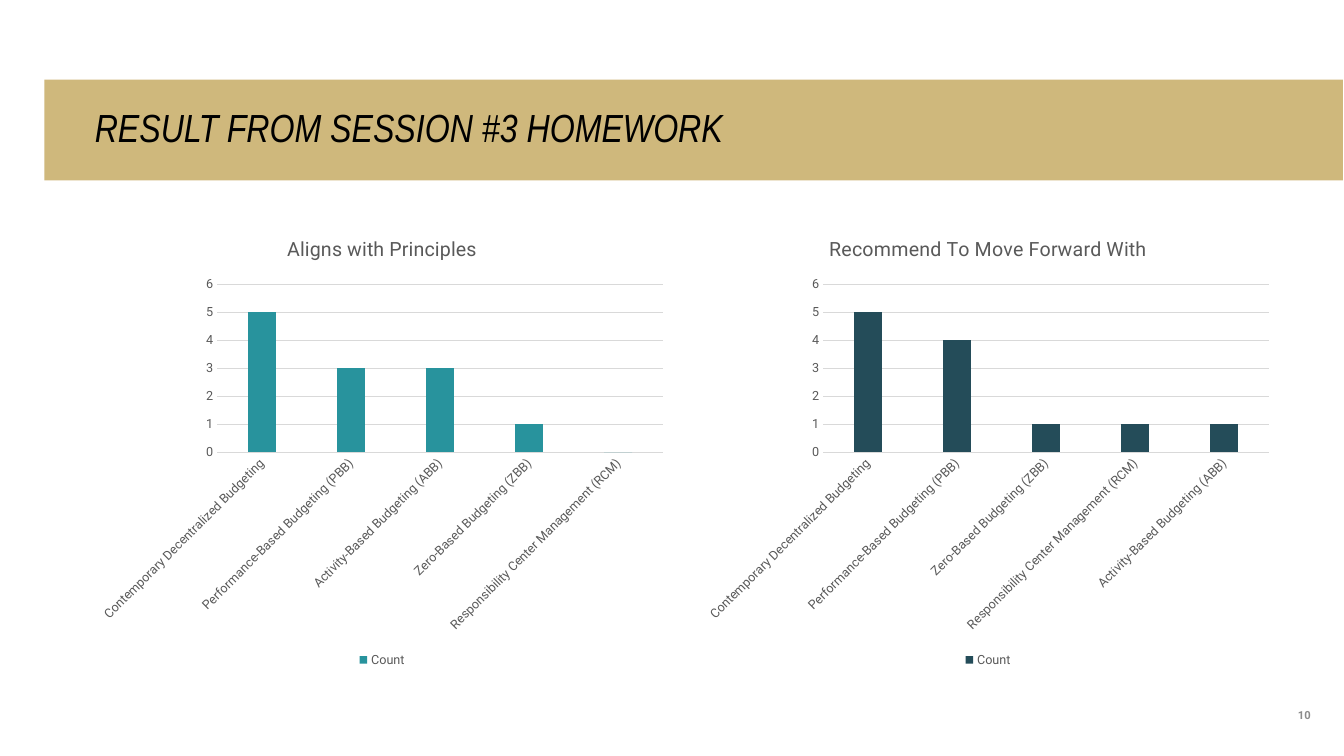
import pptx
import pptx.chart.data
import pptx.dml.color
import pptx.enum.chart
import pptx.enum.text
import pptx.util

PX = 9144
COLORS = {
    "gold": "CFB87C",
    "black": "000000",
    "number": "8C8C8C",
    "label": "595959",
    "grid": "D9D9D9",
    "teal": "28939D",
    "navy": "244C59",
}
CONTEMPORARY = "Contemporary Decentralized Budgeting"
PERFORMANCE = "Performance-Based Budgeting (PBB)"
ACTIVITY = "Activity-Based Budgeting (ABB)"
ZERO = "Zero-Based Budgeting (ZBB)"
RESPONSIBILITY = "Responsibility Center Management (RCM)"
CHARTS = [
    ("Recommend To Move Forward With", 690, "navy",
     [CONTEMPORARY, PERFORMANCE, ZERO, RESPONSIBILITY, ACTIVITY], [5, 4, 1, 1, 1]),
    ("Aligns with Principles", 89, "teal",
     [CONTEMPORARY, PERFORMANCE, ACTIVITY, ZERO, RESPONSIBILITY], [5, 3, 3, 1, 0]),
]


def rgb(name):
    return pptx.dml.color.RGBColor.from_string(COLORS[name])


def write(frame, text, size, color, font="Roboto", bold=False, italic=False,
          align=None, spacing=None):
    para = frame.paragraphs[0]
    para.alignment = align
    para.line_spacing = spacing
    span = para.add_run()
    span.text = text
    span.font.size = pptx.util.Pt(size)
    span.font.name = font
    span.font.bold = bold
    span.font.italic = italic
    span.font.color.rgb = rgb(color)


deck = pptx.Presentation()
deck.slide_width = 1333 * PX
deck.slide_height = 750 * PX
page = deck.slides.add_slide(deck.slide_layouts[5])

title = page.shapes.title
title.left, title.top, title.width, title.height = 44 * PX, 79 * PX, 1288 * PX, 100 * PX
title.fill.solid()
title.fill.fore_color.rgb = rgb("gold")
frame = title.text_frame
frame.auto_size = pptx.enum.text.MSO_AUTO_SIZE.NONE
frame.word_wrap = True
frame.vertical_anchor = pptx.enum.text.MSO_ANCHOR.MIDDLE
frame.margin_left, frame.margin_right = 50 * PX, 100 * PX
frame.margin_top = frame.margin_bottom = 5 * PX
write(frame, "RESULT FROM SESSION #3 HOMEWORK", size=28, color="black",
      font="Arial Narrow", italic=True, align=pptx.enum.text.PP_ALIGN.LEFT, spacing=0.9)

number_box = page.shapes.add_textbox(1215 * PX, 666 * PX, 85 * PX, 50 * PX)
frame = number_box.text_frame
frame.word_wrap = True
frame.vertical_anchor = pptx.enum.text.MSO_ANCHOR.BOTTOM
frame.margin_left = frame.margin_right = frame.margin_top = frame.margin_bottom = 0
write(frame, "10", size=8, color="number", bold=True, align=pptx.enum.text.PP_ALIGN.RIGHT)

for heading, left, color, categories, counts in CHARTS:
    data = pptx.chart.data.CategoryChartData()
    data.categories = categories
    data.add_series("Count", counts)
    chart = page.shapes.add_chart(
        pptx.enum.chart.XL_CHART_TYPE.COLUMN_CLUSTERED,
        left * PX, 216 * PX, 580 * PX, 450 * PX, data).chart
    chart.font.size = pptx.util.Pt(10)
    chart.font.name = "Roboto"
    chart.font.color.rgb = rgb("black")
    chart.has_title = True
    write(chart.chart_title.text_frame, heading, size=14, color="label")
    chart.chart_title.include_in_layout = False

    chart.has_legend = True
    chart.legend.position = pptx.enum.chart.XL_LEGEND_POSITION.BOTTOM
    chart.legend.include_in_layout = False
    category_axis, value_axis = chart.category_axis, chart.value_axis
    for label_font in (chart.legend.font, category_axis.tick_labels.font,
                       value_axis.tick_labels.font):
        label_font.size = pptx.util.Pt(9)
        label_font.name = "Roboto"
        label_font.color.rgb = rgb("label")

    for axis in (category_axis, value_axis):
        axis.major_tick_mark = pptx.enum.chart.XL_TICK_MARK.NONE
        axis.minor_tick_mark = pptx.enum.chart.XL_TICK_MARK.NONE
    value_axis.minimum_scale = 0
    value_axis.maximum_scale = 6
    value_axis.major_unit = 1
    value_axis.has_major_gridlines = True
    value_axis.format.line.fill.background()
    for line in (category_axis.format.line, value_axis.major_gridlines.format.line):
        line.color.rgb = rgb("grid")
        line.width = pptx.util.Pt(0.75)

    plot = chart.plots[0]
    plot.vary_by_categories = False
    plot.gap_width = 219
    plot.overlap = -27
    fill = plot.series[0].format.fill
    fill.solid()
    fill.fore_color.rgb = rgb(color)

deck.save("out.pptx")
